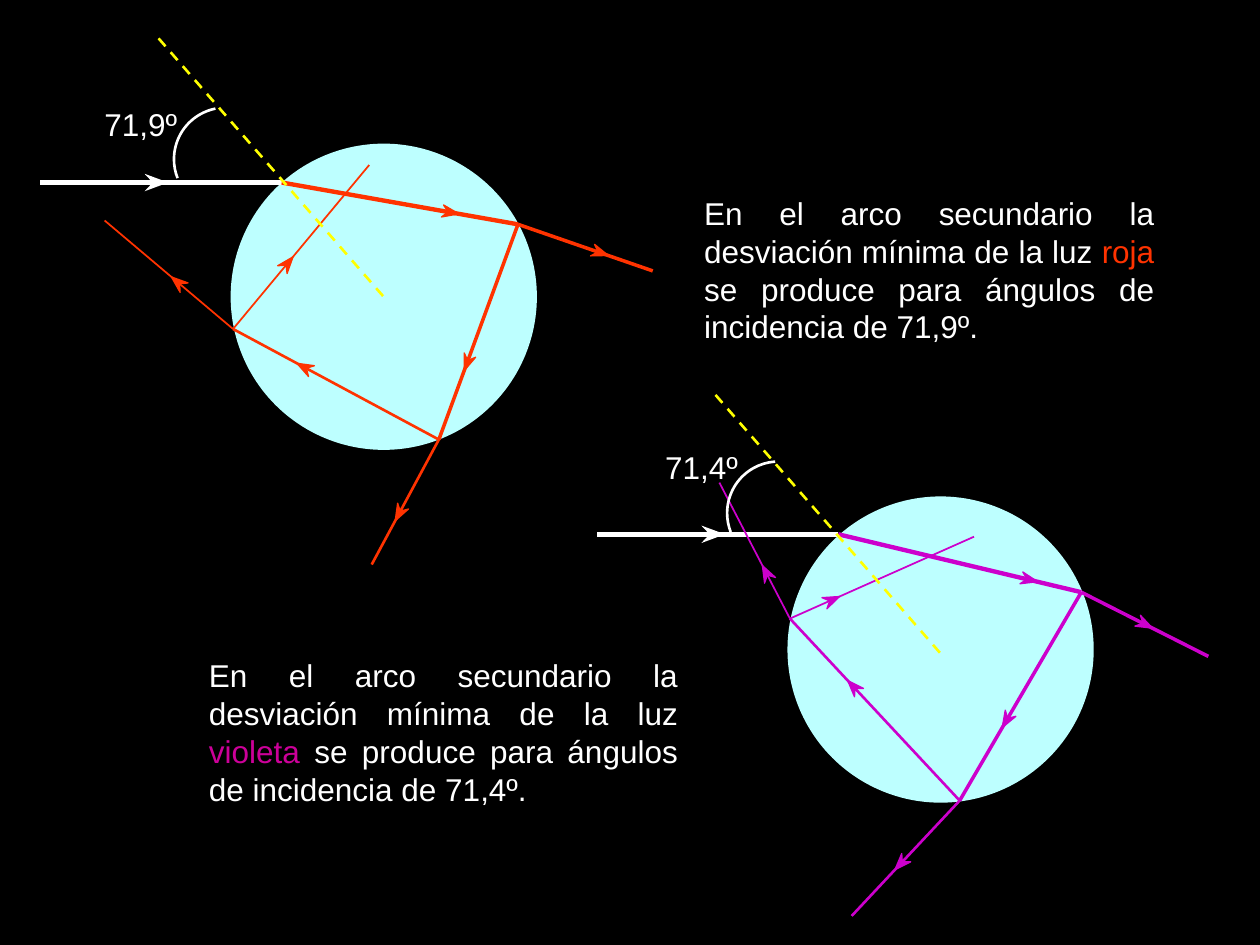
from math import hypot
from pptx import Presentation
from pptx.dml.color import RGBColor
from pptx.enum.dml import MSO_LINE
from pptx.enum.shapes import MSO_CONNECTOR, MSO_SHAPE
from pptx.enum.text import PP_ALIGN
from pptx.oxml import parse_xml
from pptx.util import Pt

COLORS = {
    "background": "000000", "drop": "BDFFFF", "white": "FFFFFF", "normal": "FFFF00",
    "red": "FF3300", "violet": "CC00CC", "violet_word": "CC0099",
}
DROP_SIZE = 175
ARC_RADIUS = 29.5
ARROW = (9.5, 7)
WHITE_ARROW = (13.5, 10)
EFFECTS = '<a:effectLst xmlns:a="http://schemas.openxmlformats.org/drawingml/2006/main"/>'

RAYS = [
    ("third", "out_third", 1),
    ("third", "inner", 1),
    ("entry", "first", 2.5),
    ("first", "out_first", 2),
    ("first", "second", 2),
    ("second", "out_second", 1.5),
    ("second", "third", 1.5),
]

DROPS = [
    {
        "color": "violet", "corner": (450, 283.7),
        "points": {
            "source": (341.3, 305.3), "entry": (479, 305.3), "first": (617.9, 338.4),
            "second": (548.4, 457.5), "third": (451.4, 353.5), "inner": (556.6, 306.7),
            "out_first": (690.5, 375.1), "out_second": (486.7, 523.4),
            "out_third": (411.1, 275.8),
        },
        "tips": [0.39, 0.27, 0.82, 0.56, 0.65, 0.6, 0.66],
        "normal": ((537.1, 373), (406.1, 222.5)),
        "arc": ((445, 293.2), 158.5, 266),
        "label": ("71,4º", 373, 252.7),
    },
    {
        "color": "red", "corner": (131.8, 82.1),
        "points": {
            "source": (23, 104.3), "entry": (161, 104.3), "first": (296, 128.2),
            "second": (250.8, 251.2), "third": (133.2, 188), "inner": (211, 94.3),
            "out_first": (373, 154.8), "out_second": (212.4, 322.6),
            "out_third": (59.8, 126),
        },
        "tips": [0.48, 0.44, 0.75, 0.67, 0.68, 0.65, 0.69],
        "normal": ((218.9, 169.2), (87.8, 18.7)),
        "arc": ((128.9, 91), 158.5, 258.7),
        "label": ("71,9º", 52.6, 56.2),
    },
]

CAPTION_START = "En el arco secundario la desviación mínima de la luz "
CAPTION_END = " se produce para ángulos de incidencia de "
CAPTIONS = [
    ((395.3, 107.3, 271.4, 93.6), "roja", "red", "71,9º."),
    ((112.3, 371.5, 282.2, 93.6), "violeta", "violet_word", "71,4º."),
]


def rgb(name):
    return RGBColor.from_string(COLORS[name])


def add_line(start, end, color, width):
    line = slide.shapes.add_connector(
        MSO_CONNECTOR.STRAIGHT, *(Pt(value) for value in (*start, *end)))
    line.line.color.rgb = rgb(color)
    line.line.width = Pt(width)
    line._element.spPr.append(parse_xml(EFFECTS))
    return line


def add_arrow(start, end, tip_share, color, size, outlined):
    run_x, run_y = end[0] - start[0], end[1] - start[1]
    distance = hypot(run_x, run_y)
    unit_x, unit_y = run_x / distance, run_y / distance
    tip_x, tip_y = start[0] + run_x * tip_share, start[1] + run_y * tip_share
    length, width = size
    outline = [(0, 0), (length, width / 2), (length * 0.65, 0), (length, -width / 2)]
    corners = [
        (Pt(tip_x - back * unit_x - side * unit_y), Pt(tip_y - back * unit_y + side * unit_x))
        for back, side in outline
    ]
    builder = slide.shapes.build_freeform(*corners[0])
    builder.add_line_segments(corners[1:], close=True)
    arrow = builder.convert_to_shape()
    arrow.shadow.inherit = False
    arrow.fill.solid()
    arrow.fill.fore_color.rgb = rgb(color)
    if outlined:
        arrow.line.color.rgb = rgb(color)
        arrow.line.width = Pt(0.75)
    else:
        arrow.line.fill.background()


def add_text(box, pieces, alignment):
    frame = slide.shapes.add_textbox(*(Pt(value) for value in box)).text_frame
    frame.word_wrap = True
    paragraph = frame.paragraphs[0]
    paragraph.alignment = alignment
    for text, color in pieces:
        run = paragraph.add_run()
        run.text = text
        run.font.name = "Arial"
        run.font.size = Pt(18)
        run.font.color.rgb = rgb(color)


def add_drop(drop):
    points, color = drop["points"], drop["color"]
    circle = slide.shapes.add_shape(
        MSO_SHAPE.OVAL, *(Pt(value) for value in (*drop["corner"], DROP_SIZE, DROP_SIZE)))
    circle.shadow.inherit = False
    circle.fill.solid()
    circle.fill.fore_color.rgb = rgb("drop")
    circle.line.fill.background()

    add_line(points["source"], points["entry"], "white", 3)
    add_arrow(points["source"], points["entry"], 0.53, "white", WHITE_ARROW, False)
    for (start, end, width), tip_share in zip(RAYS, drop["tips"]):
        add_line(points[start], points[end], color, width)
        add_arrow(points[start], points[end], tip_share, color, ARROW, True)
    add_line(*drop["normal"], "normal", 1.5).line.dash_style = MSO_LINE.DASH

    (center_x, center_y), start_angle, end_angle = drop["arc"]
    arc = slide.shapes.add_shape(
        MSO_SHAPE.ARC, Pt(center_x - ARC_RADIUS), Pt(center_y - ARC_RADIUS),
        Pt(2 * ARC_RADIUS), Pt(2 * ARC_RADIUS))
    arc.adjustments[0] = start_angle * 0.6
    arc.adjustments[1] = end_angle * 0.6
    arc.shadow.inherit = False
    arc.fill.background()
    arc.line.color.rgb = rgb("white")
    arc.line.width = Pt(1.5)

    text, left, top = drop["label"]
    add_text((left, top, 66.2, 28.8), [(text, "white")], PP_ALIGN.LEFT)


presentation = Presentation()
presentation.slide_width, presentation.slide_height = Pt(720), Pt(540)
slide = presentation.slides.add_slide(presentation.slide_layouts[6])
slide.background.fill.solid()
slide.background.fill.fore_color.rgb = rgb("background")

for drop in DROPS:
    add_drop(drop)
for box, word, word_color, angle in CAPTIONS:
    pieces = [(CAPTION_START, "white"), (word, word_color), (CAPTION_END + angle, "white")]
    add_text(box, pieces, PP_ALIGN.JUSTIFY)

presentation.save("out.pptx")
